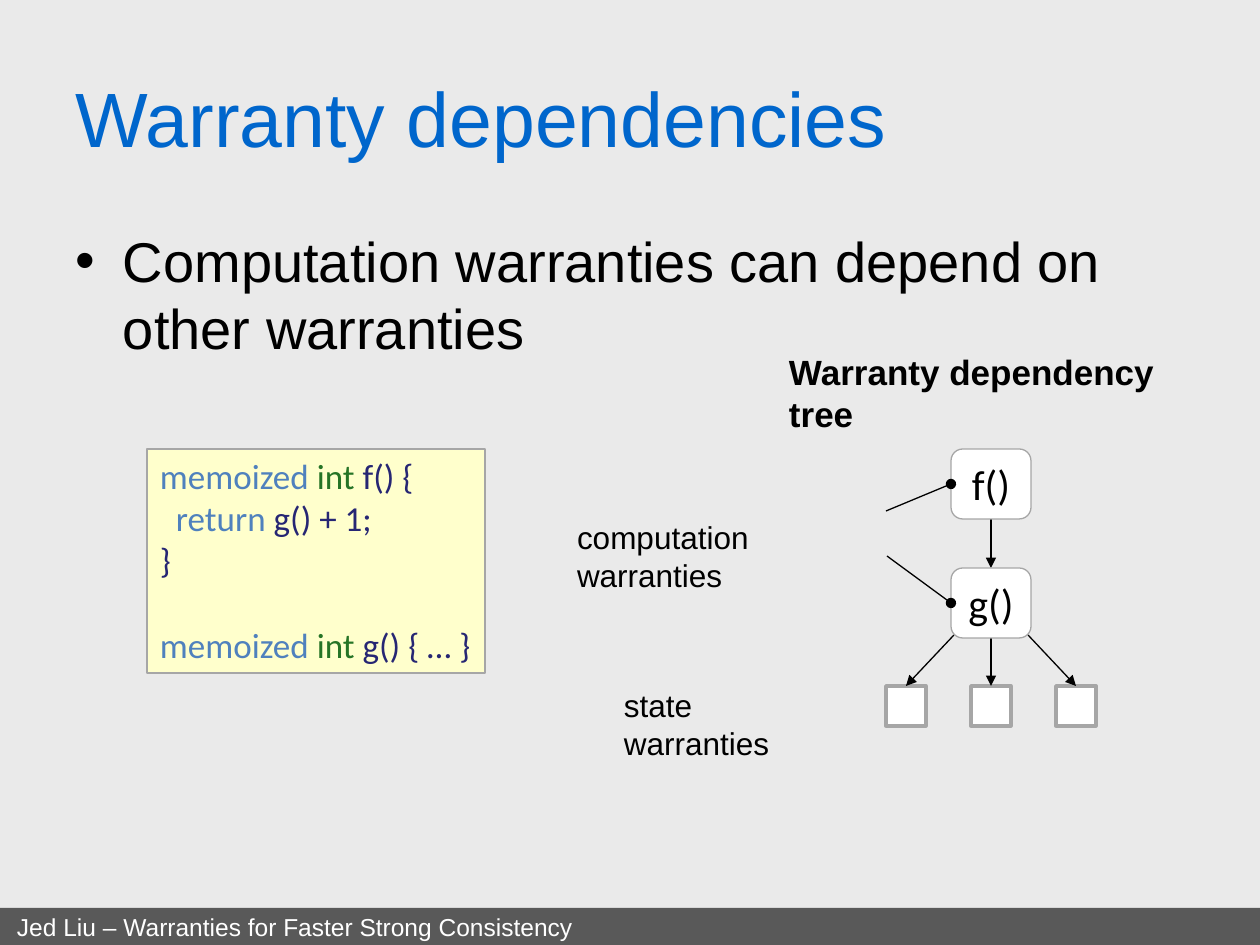
"""Build the slide on warranty dependencies with its code sample and dependency tree."""
from dataclasses import dataclass

from lxml.etree import SubElement
from pptx import Presentation
from pptx.dml.color import RGBColor
from pptx.enum.shapes import MSO_CONNECTOR as Connector, MSO_SHAPE as Shape
from pptx.enum.text import MSO_ANCHOR as Anchor, PP_ALIGN as Align
from pptx.oxml.ns import qn
from pptx.util import Emu, Pt


@dataclass(frozen=True)
class Theme:
    background: str = "EAEAEA"
    title: str = "0066CC"
    ink: str = "000000"
    white: str = "FFFFFF"
    footer: str = "595959"
    border: str = "A6A6A6"
    code_fill: str = "FFFFCC"
    keyword: str = "4F81BD"
    type_name: str = "267426"
    code: str = "262673"
    sans: str = "Arial"
    code_font: str = "Calibri"
    title_size: int = 44
    body_size: int = 32
    node_size: int = 24
    code_size: int = 20
    label_size: int = 18
    footer_size: int = 14


THEME = Theme()
SCALE = 914400 / 126
SLIDE_W, SLIDE_H = 1260, 945

TITLE = "Warranty dependencies"
BODY = "Computation warranties can depend on other warranties"
FOOTER = "Jed Liu – Warranties for Faster Strong Consistency"
KEY, TYPE, CODE = THEME.keyword, THEME.type_name, THEME.code
CODE_LINES = [
    [("memoized ", KEY), ("int", TYPE), (" f() {", CODE)],
    [("return", KEY), (" g() + 1;", CODE)],
    [("}", CODE)],
    [("memoized ", KEY), ("int", TYPE), (" g() { … }", CODE)],
]
CODE_INDENTS = {1: 16}
CODE_GAPS = {3: 24.4}
LABELS = [
    ("state warranties", (611, 680, 219, 50), THEME.label_size, False),
    ("Warranty dependency tree", (776, 344, 411, 55), THEME.code_size, True),
    ("computation warranties", (564, 512, 321, 50), THEME.label_size, False),
]
CALLS = ["f()", "g()"]
LABEL_LINES = [(886, 511), (887, 556)]

TREE_X, TREE_Y = 991, 449
NODE_W, NODE_H, NODE_STEP = 80, 70, 119
LEAF, LEAF_STEP, LEAF_Y = 40, 85, 686


def px(length):
    return Emu(round(length * SCALE))


def rgb(color):
    return RGBColor.from_string(color)


def write(shape, lines, *, size, font=THEME.sans, color=THEME.ink, bold=False, align=Align.LEFT,
          anchor=Anchor.TOP, left=13, wrap=True, indents=None, gaps=None):
    frame = shape.text_frame
    frame.word_wrap, frame.vertical_anchor = wrap, anchor
    frame.margin_left, frame.margin_right = px(left), px(13)
    frame.margin_top = frame.margin_bottom = px(6)
    for row, line in enumerate([lines] if isinstance(lines, str) else lines):
        paragraph = frame.paragraphs[0] if row == 0 else frame.add_paragraph()
        paragraph.alignment = align
        if row in (indents or {}):
            paragraph._p.get_or_add_pPr().set("marL", str(px(indents[row])))
        if row in (gaps or {}):
            paragraph.space_before = Pt(gaps[row])
        for words, tint in [(line, color)] if isinstance(line, str) else line:
            run = paragraph.add_run()
            run.text = words
            run.font.name, run.font.size, run.font.bold = font, Pt(size), bold
            run.font.color.rgb = rgb(tint)
    return frame


def add_text(slide, box, lines, **style):
    return write(slide.shapes.add_textbox(*map(px, box)), lines, **style)


def add_box(slide, kind, box, fill, line_width=0):
    shape = slide.shapes.add_shape(kind, *map(px, box))
    shape.shadow.inherit = False
    shape.fill.solid()
    shape.fill.fore_color.rgb = rgb(fill)
    if line_width:
        shape.line.color.rgb = rgb(THEME.border)
        shape.line.width = Pt(line_width)
    else:
        shape.line.fill.background()
    return shape


def add_arrow(slide, start, end, head="triangle"):
    arrow = slide.shapes.add_connector(Connector.STRAIGHT, *map(px, (*start, *end)))
    arrow.line.color.rgb = rgb(THEME.ink)
    arrow.line.width = Pt(0.75)
    SubElement(arrow.line._get_or_add_ln(), qn("a:tailEnd"), type=head)
    SubElement(arrow._element.spPr, qn("a:effectLst"))


def add_bullet(paragraph, indent):
    properties = paragraph._p.get_or_add_pPr()
    properties.set("marL", str(px(indent)))
    properties.set("indent", str(px(-indent)))
    SubElement(properties, qn("a:buFont"), typeface=THEME.sans)
    SubElement(properties, qn("a:buChar"), char="•")


def add_tree(slide):
    node_bottom = TREE_Y + NODE_STEP + NODE_H
    add_arrow(slide, (TREE_X, TREE_Y + NODE_H), (TREE_X, TREE_Y + NODE_STEP))
    for side in (-1, 0, 1):
        leaf_x = TREE_X + side * LEAF_STEP
        add_box(slide, Shape.RECTANGLE, (leaf_x - LEAF / 2, LEAF_Y, LEAF, LEAF), THEME.white, 2)
        start = (TREE_X + side * 37, node_bottom - abs(side) * 3)
        add_arrow(slide, start, (leaf_x, LEAF_Y))
    for level, (call, start) in enumerate(zip(CALLS, LABEL_LINES)):
        left, top = TREE_X - NODE_W / 2, TREE_Y + level * NODE_STEP
        node = add_box(slide, Shape.ROUNDED_RECTANGLE, (left, top, NODE_W, NODE_H), THEME.white, 0.75)
        write(node, call, size=THEME.node_size, font=THEME.code_font, align=Align.CENTER,
              anchor=Anchor.MIDDLE, wrap=False)
        add_arrow(slide, start, (left, top + NODE_H / 2), "oval")


def main():
    deck = Presentation()
    deck.slide_width, deck.slide_height = px(SLIDE_W), px(SLIDE_H)
    slide = deck.slides.add_slide(deck.slide_layouts[6])
    slide.background.fill.solid()
    slide.background.fill.fore_color.rgb = rgb(THEME.background)

    add_text(slide, (63, 38, 1134, 157), TITLE, size=THEME.title_size, color=THEME.title,
             anchor=Anchor.MIDDLE)
    body = add_text(slide, (63, 220, 1134, 649), BODY, size=THEME.body_size)
    add_bullet(body.paragraphs[0], 47)
    footer = add_box(slide, Shape.RECTANGLE, (0, 908, SLIDE_W, 37), THEME.footer)
    write(footer, FOOTER, size=THEME.footer_size, color=THEME.white, anchor=Anchor.MIDDLE, left=17)
    sample = add_box(slide, Shape.RECTANGLE, (147, 449, 338, 224), THEME.code_fill, 0.75)
    write(sample, CODE_LINES, size=THEME.code_size, font=THEME.code_font, wrap=False,
          indents=CODE_INDENTS, gaps=CODE_GAPS)
    add_tree(slide)
    for words, box, size, bold in LABELS:
        add_text(slide, box, words, size=size, bold=bold)
    deck.save("out.pptx")


if __name__ == "__main__":
    main()
